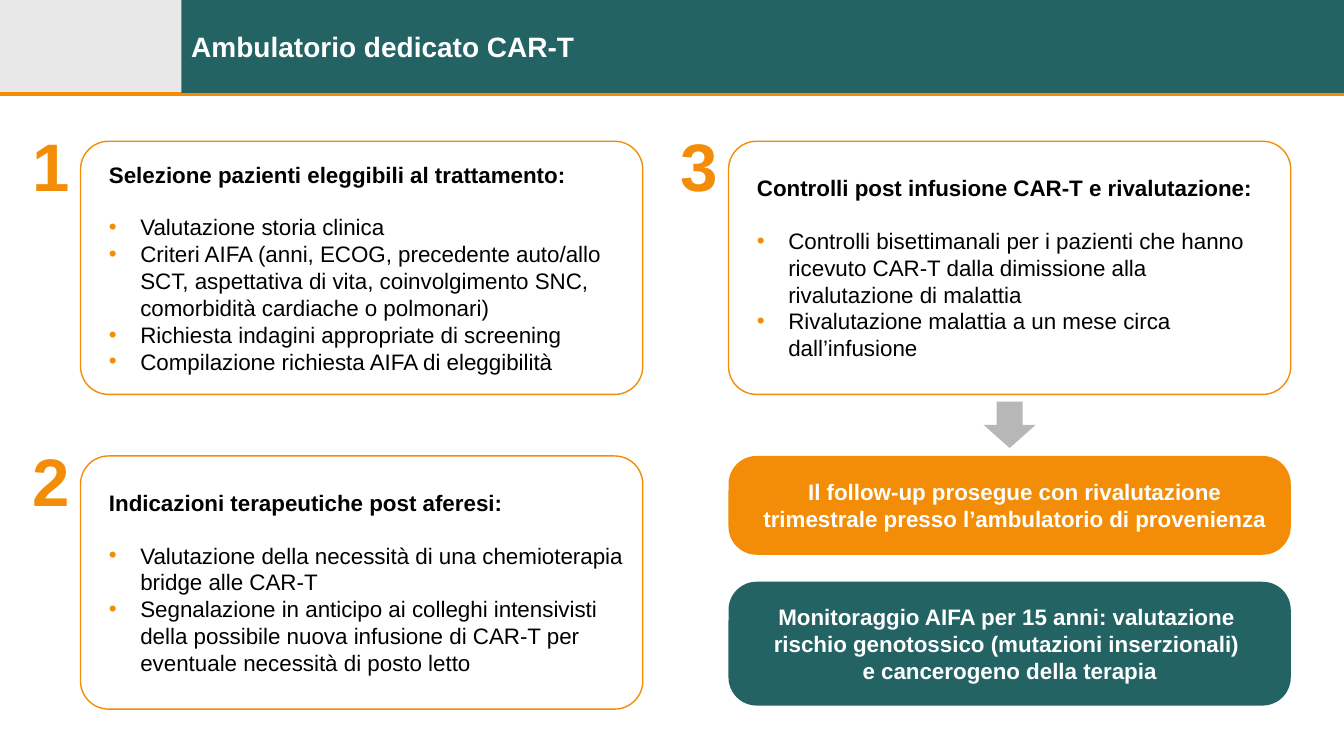
from lxml.etree import SubElement
from pptx import Presentation
from pptx.dml.color import RGBColor
from pptx.enum.shapes import MSO_CONNECTOR, MSO_SHAPE
from pptx.enum.text import MSO_ANCHOR, PP_ALIGN
from pptx.oxml.ns import qn
from pptx.util import Cm, Pt

ORANGE = RGBColor(0xF3, 0x8D, 0x08)
TEAL = RGBColor(0x23, 0x63, 0x64)
LIGHT_GREY = RGBColor(0xE8, 0xE8, 0xE8)
ARROW_GREY = RGBColor(0xB7, 0xB7, 0xB8)
WHITE = RGBColor(0xFF, 0xFF, 0xFF)
BLACK = RGBColor(0, 0, 0)

SLIDE_WIDTH, SLIDE_HEIGHT = 33.87, 19.05
HEADER_HEIGHT, LOGO_WIDTH = 2.34, 4.57
LEFT_COLUMN, RIGHT_COLUMN = 2.03, 18.36
TOP_ROW, BOTTOM_ROW = 3.56, 11.49
CARD_WIDTH, CARD_HEIGHT = 14.17, 6.38
CORNER_RADIUS = 0.71

CARDS = [
    ("1", LEFT_COLUMN, TOP_ROW, "Selezione pazienti eleggibili al trattamento:", [
        "Valutazione storia clinica",
        "Criteri AIFA (anni, ECOG, precedente auto/allo SCT, aspettativa di vita, "
        "coinvolgimento SNC, comorbidità cardiache o polmonari)",
        "Richiesta indagini appropriate di screening",
        "Compilazione richiesta AIFA di eleggibilità"]),
    ("2", LEFT_COLUMN, BOTTOM_ROW, "Indicazioni terapeutiche post aferesi:", [
        "Valutazione della necessità di una chemioterapia bridge alle CAR-T",
        "Segnalazione in anticipo ai colleghi intensivisti della possibile nuova "
        "infusione di CAR-T per eventuale necessità di posto letto"]),
    ("3", RIGHT_COLUMN, TOP_ROW, "Controlli post infusione CAR-T e rivalutazione:", [
        "Controlli bisettimanali per i pazienti che hanno ricevuto CAR-T dalla "
        "dimissione alla rivalutazione di malattia",
        "Rivalutazione malattia a un mese circa dall’infusione"]),
]


def write(paragraph, text, size=16, color=BLACK, bold=True, align=PP_ALIGN.LEFT,
          space_after=0, bullet=False):
    """Fill a paragraph; a vertical tab in the text is a line break."""
    paragraph.text = text
    paragraph.alignment = align
    paragraph.space_after = Pt(space_after)
    if bullet:
        properties = paragraph._p.get_or_add_pPr()
        properties.set("marL", str(Cm(0.79)))
        properties.set("indent", str(-Cm(0.79)))
        bullet_color = SubElement(properties, qn("a:buClr"))
        SubElement(bullet_color, qn("a:srgbClr"), val=str(ORANGE))
        SubElement(properties, qn("a:buFont"), typeface="Arial")
        SubElement(properties, qn("a:buChar"), char="•")
    for run in paragraph.runs:
        run.font.name = "Arial"
        run.font.size = Pt(size)
        run.font.bold = bold
        run.font.color.rgb = color
    for line_break in paragraph._p.findall(qn("a:br")):
        SubElement(line_break, qn("a:rPr"), sz=str(size * 100))


class SlideBuilder:
    def __init__(self, slide):
        self.slide = slide

    def shape(self, kind, left, top, width, height, fill=None, line=None):
        shape = self.slide.shapes.add_shape(kind, Cm(left), Cm(top), Cm(width), Cm(height))
        shape.shadow.inherit = False
        if fill is None:
            shape.fill.background()
        else:
            shape.fill.solid()
            shape.fill.fore_color.rgb = fill
        if line is None:
            shape.line.fill.background()
        else:
            shape.line.color.rgb = line
            shape.line.width = Pt(1)
        return shape

    def rounded_box(self, left, top, height, fill=None, line=None, insets=(0.51, 0.25)):
        """Add a card-wide box with the shared corner radius and return its text frame."""
        box = self.shape(MSO_SHAPE.ROUNDED_RECTANGLE, left, top, CARD_WIDTH, height, fill, line)
        box.adjustments[0] = CORNER_RADIUS / min(CARD_WIDTH, height)
        frame = box.text_frame
        frame.word_wrap = True
        frame.vertical_anchor = MSO_ANCHOR.MIDDLE
        frame.margin_left, frame.margin_right = (Cm(inset) for inset in insets)
        return frame

    def text_box(self, left, top, width, height, text, anchor=MSO_ANCHOR.TOP, **style):
        box = self.slide.shapes.add_textbox(Cm(left), Cm(top), Cm(width), Cm(height))
        box.text_frame.word_wrap = True
        box.text_frame.vertical_anchor = anchor
        write(box.text_frame.paragraphs[0], text, **style)

    def rule(self, top):
        rule = self.slide.shapes.add_connector(
            MSO_CONNECTOR.STRAIGHT, Cm(0), Cm(top), Cm(SLIDE_WIDTH), Cm(top))
        rule.line.color.rgb = ORANGE
        rule.line.width = Pt(3)
        SubElement(rule._element.spPr, qn("a:effectLst"))

    def numbered_card(self, number, left, top, heading, items):
        frame = self.rounded_box(left, top, CARD_HEIGHT, line=ORANGE)
        write(frame.paragraphs[0], heading, space_after=18.4)
        for item in items:
            write(frame.add_paragraph(), item, bold=False, bullet=True)
        self.text_box(left - 1.75, top - 0.55, 1.73, 2.31, number,
                      size=48, color=ORANGE, align=PP_ALIGN.RIGHT)

    def banner(self, top, height, fill, text, **layout):
        frame = self.rounded_box(RIGHT_COLUMN, top, height, fill=fill, **layout)
        write(frame.paragraphs[0], text, color=WHITE, align=PP_ALIGN.CENTER)


def main():
    presentation = Presentation()
    presentation.slide_width = Cm(SLIDE_WIDTH)
    presentation.slide_height = Cm(SLIDE_HEIGHT)
    builder = SlideBuilder(presentation.slides.add_slide(presentation.slide_layouts[6]))

    title_width = SLIDE_WIDTH - LOGO_WIDTH
    builder.shape(MSO_SHAPE.RECTANGLE, 0, 0, LOGO_WIDTH, HEADER_HEIGHT, fill=LIGHT_GREY)
    builder.rule(HEADER_HEIGHT + 0.03)
    builder.shape(MSO_SHAPE.RECTANGLE, LOGO_WIDTH, 0, title_width, HEADER_HEIGHT, fill=TEAL)
    builder.text_box(LOGO_WIDTH, 0, title_width, HEADER_HEIGHT, "Ambulatorio dedicato CAR-T",
                     anchor=MSO_ANCHOR.MIDDLE, size=20, color=WHITE)

    for card in CARDS:
        builder.numbered_card(*card)

    builder.banner(BOTTOM_ROW, 2.49, ORANGE,
                   "Il follow-up prosegue con rivalutazione trimestrale "
                   "presso l’ambulatorio di provenienza")
    builder.banner(14.66, 3.12, TEAL,
                   "Monitoraggio AIFA per 15 anni: valutazione \v"
                   "rischio genotossico (mutazioni inserzionali) \v"
                   "e cancerogeno della terapia", insets=(0, 0))

    arrow_width = 1.32
    arrow_left = RIGHT_COLUMN + (CARD_WIDTH - arrow_width) / 2
    builder.shape(MSO_SHAPE.DOWN_ARROW, arrow_left, 10.12, arrow_width, 1.17, fill=ARROW_GREY)

    presentation.save("out.pptx")


if __name__ == "__main__":
    main()
